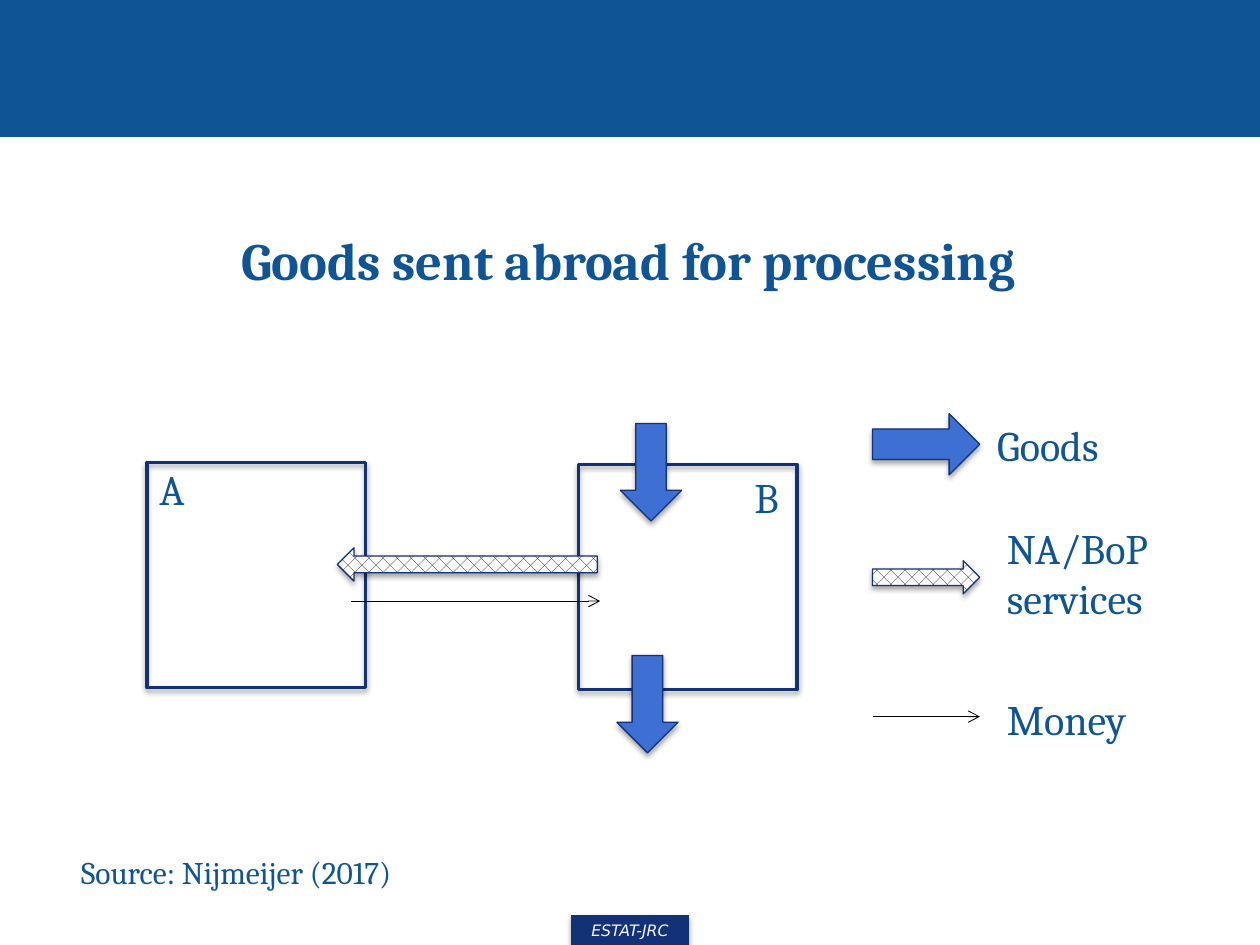
from pptx import Presentation
from pptx.dml.color import RGBColor
from pptx.enum.dml import MSO_PATTERN
from pptx.enum.shapes import MSO_CONNECTOR, MSO_SHAPE
from pptx.enum.text import MSO_ANCHOR, MSO_AUTO_SIZE, PP_ALIGN
from pptx.oxml import parse_xml
from pptx.oxml.ns import nsdecls
from pptx.util import Pt

RECT = MSO_SHAPE.RECTANGLE
ARROW = MSO_SHAPE.DOWN_ARROW
STRAIGHT = MSO_CONNECTOR.STRAIGHT
HATCH = MSO_PATTERN.PERCENT_25
MIDDLE = MSO_ANCHOR.MIDDLE
CENTER = PP_ALIGN.CENTER
GROW = MSO_AUTO_SIZE.SHAPE_TO_FIT_TEXT
NO_GROW = MSO_AUTO_SIZE.NONE

BLUE = RGBColor(0x0F, 0x54, 0x94)
NAVY = RGBColor(0x13, 0x31, 0x76)
MID = RGBColor(0x3E, 0x6F, 0xD2)
BLACK = RGBColor(0, 0, 0)
WHITE = RGBColor(0xFF, 0xFF, 0xFF)
PALE = RGBColor(0xF2, 0xF2, 0xF2)

SHADOW = (
    f'<a:outerShdw {nsdecls("a")} blurRad="{Pt(3.1)}" dist="{Pt(1.8)}" dir="5400000" rotWithShape="0">'
    '<a:srgbClr val="000000"><a:alpha val="35000"/></a:srgbClr></a:outerShdw>'
)


class Board:
    font = "Cambria"
    ink = BLUE

    def __init__(self, deck):
        self.slide = deck.slides.add_slide(deck.slide_layouts[5])
        self.shapes = self.slide.shapes

    def text(self, para, words, size, font=None, color=None, bold=False, slant=False):
        run = para.add_run()
        run.text = words
        face = run.font
        face.name = font or self.font
        face.size = Pt(size)
        face.bold = bold
        face.italic = slant
        face.color.rgb = color or self.ink

    def title(self, words, x, y, w, h):
        shape = self.shapes.title
        shape.left, shape.top, shape.width, shape.height = Pt(x), Pt(y), Pt(w), Pt(h)
        frame = shape.text_frame
        frame.auto_size = NO_GROW
        frame.vertical_anchor = MIDDLE
        para = frame.paragraphs[0]
        para.alignment = CENTER
        self.text(para, words, 30, bold=True)

    def shape(self, kind, x, y, w, h, fill=None, edge=NAVY, width=0.75, shade=True):
        shape = self.shapes.add_shape(kind, Pt(x), Pt(y), Pt(w), Pt(h))
        if fill is None:
            shape.fill.background()
        else:
            shape.fill.solid()
            shape.fill.fore_color.rgb = fill
        shape.line.color.rgb = edge
        shape.line.width = Pt(width)
        shape.shadow.inherit = False
        if shade:
            shape._element.spPr.find("{*}effectLst").append(parse_xml(SHADOW))
        return shape

    def arrow(self, x, y, w, h, turn=0, hatch=False):
        shape = self.shape(ARROW, x, y, w, h, MID)
        shape.rotation = turn
        if hatch:
            shape.fill.patterned()
            shape.fill.pattern = HATCH
            shape.fill.fore_color.rgb = BLACK
            shape.fill.back_color.rgb = WHITE

    def line(self, x, y, end):
        line = self.shapes.add_connector(STRAIGHT, Pt(x), Pt(y), Pt(end), Pt(y))
        line.line.color.rgb = BLACK
        line.line.width = Pt(0.5)
        props = line._element.spPr
        props.find("{*}ln").append(parse_xml(f'<a:tailEnd {nsdecls("a")} type="arrow"/>'))
        props.append(parse_xml(f'<a:effectLst {nsdecls("a")}/>'))

    def label(self, lines, x, y, w, h, size=24):
        frame = self.shapes.add_textbox(Pt(x), Pt(y), Pt(w), Pt(h)).text_frame
        frame.word_wrap = False
        frame.auto_size = GROW
        for i, words in enumerate(lines):
            para = frame.add_paragraph() if i else frame.paragraphs[0]
            self.text(para, words, size)

    def badge(self, words, x, y, w, h):
        frame = self.shape(RECT, x, y, w, h, NAVY).text_frame
        frame.margin_top = frame.margin_bottom = 0
        frame.word_wrap = False
        frame.vertical_anchor = MIDDLE
        para = frame.paragraphs[0]
        para.alignment = CENTER
        self.text(para, words, 9, "DejaVu Sans", PALE, slant=True)


def main():
    deck = Presentation()
    deck.slide_width, deck.slide_height = Pt(720), Pt(540)
    board = Board(deck)

    board.shape(RECT, 0, 0, 720, 78, BLUE, BLUE, shade=False)
    board.badge("ESTAT-JRC", 326.5, 523, 67, 17)
    board.title("Goods sent abroad for processing", 35, 112, 648, 73)

    for x, y in ((84, 264.3), (330.5, 265.5)):
        board.shape(RECT, x, y, 125, 128.5, width=2)
    board.label(["A"], 84, 261.5, 31, 36)
    board.label(["B"], 424, 265.7, 31, 36)

    for x, y in ((354.5, 242), (352.5, 374.5)):
        board.arrow(x, y, 35, 55.7)
    board.arrow(257.5, 248.3, 19, 148.5, 90, True)
    board.line(200.5, 343.5, 343)

    board.arrow(511.7, 223.2, 35, 61.3, 270)
    board.arrow(519.7, 299.2, 19, 61.3, 270, True)
    board.line(499, 409.5, 560)
    board.label(["Goods"], 562.8, 236, 83, 36)
    board.label(["NA/BoP", "services"], 568.3, 295, 104, 65.5)
    board.label(["Money"], 568.3, 392.5, 88, 36)
    board.label(["Source: Nijmeijer (2017)"], 39.3, 484, 212, 29, 18)

    deck.save("out.pptx")


if __name__ == "__main__":
    main()
